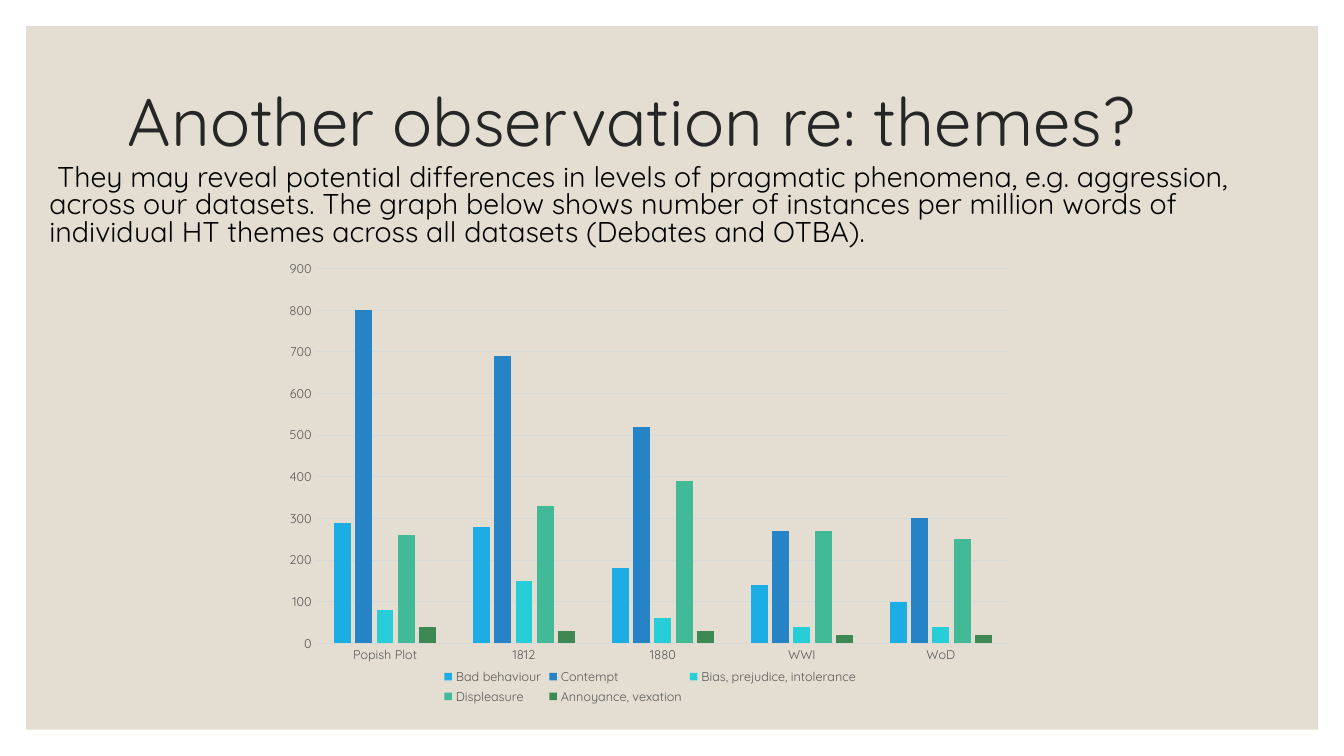
from lxml.etree import SubElement
from pptx import Presentation
from pptx.chart.data import CategoryChartData
from pptx.dml.color import RGBColor
from pptx.enum.chart import XL_CHART_TYPE as ChartType, XL_LEGEND_POSITION as LegendPosition
from pptx.enum.chart import XL_TICK_MARK as TickMark
from pptx.enum.shapes import MSO_SHAPE as Shape
from pptx.enum.text import MSO_ANCHOR as Anchor, MSO_AUTO_SIZE as AutoSize, PP_ALIGN as Align
from pptx.oxml import parse_xml
from pptx.oxml.ns import nsdecls, qn
from pptx.util import Cm, Pt

FONT = "Quicksand"
SAND = RGBColor(0xE3, 0xDE, 0xD1)
CHARCOAL = RGBColor(0x26, 0x26, 0x26)
BLACK = RGBColor(0, 0, 0)
LABEL_GREY = RGBColor(0x59, 0x59, 0x59)
LINE_GREY = RGBColor(0xD9, 0xD9, 0xD9)

TITLE = "Another observation re: themes?"
BODY = (
    " They may reveal potential differences in levels of pragmatic phenomena, e.g. aggression, "
    "across our datasets. The graph below shows number of instances per million words of "
    "individual HT themes across all datasets (Debates and OTBA)."
)
DATASETS = ["Popish Plot", "1812", "1880", "WWI", "WoD"]
THEMES = [
    ("Bad behaviour", [290, 280, 180, 140, 100], RGBColor(0x1C, 0xAD, 0xE4)),
    ("Contempt", [800, 690, 520, 270, 300], RGBColor(0x26, 0x83, 0xC6)),
    ("Bias, prejudice, intolerance", [80, 150, 60, 40, 40], RGBColor(0x27, 0xCE, 0xD7)),
    ("Displeasure", [260, 330, 390, 270, 250], RGBColor(0x42, 0xBA, 0x97)),
    ("Annoyance, vexation", [40, 30, 30, 20, 20], RGBColor(0x3E, 0x88, 0x53)),
]
PLOT_LAYOUT = {"x": 0.055, "y": 0.024, "w": 0.924, "h": 0.832}


def set_font(font, size, color):
    font.name = FONT
    font.size = Pt(size)
    font.color.rgb = color


def add_panel(slide):
    panel = slide.shapes.add_shape(Shape.RECTANGLE, Cm(0.66), Cm(0.66), Cm(32.56), Cm(17.73))
    panel.shadow.inherit = False
    panel.fill.solid()
    panel.fill.fore_color.rgb = SAND
    panel.line.fill.background()
    slide.shapes.title.element.addprevious(panel.element)


def fill_placeholder(box, place, text, size, color, anchor, line_spacing, space_before):
    box.left, box.top, box.width, box.height = (Cm(length) for length in place)
    frame = box.text_frame
    frame.text = text
    frame.word_wrap = True
    frame.auto_size = AutoSize.NONE
    frame.vertical_anchor = anchor
    para = frame.paragraphs[0]
    para.alignment = Align.LEFT
    para.line_spacing = line_spacing
    para.space_before = Pt(space_before)
    set_font(para.font, size, color)
    properties = para._p.get_or_add_pPr()
    properties.set("marL", "0")
    properties.set("indent", "0")
    properties.insert_element_before(
        parse_xml(f"<a:buNone {nsdecls('a')}/>"), "a:tabLst", "a:defRPr", "a:extLst"
    )


def set_line(line, color):
    line.color.rgb = color
    line.width = Pt(0.75)


def style_axis(axis):
    axis.major_tick_mark = axis.minor_tick_mark = TickMark.NONE
    set_font(axis.tick_labels.font, 9, LABEL_GREY)


def set_plot_layout(chart):
    plot_area = chart._chartSpace.chart.plotArea
    for old in plot_area.findall(qn("c:layout")):
        plot_area.remove(old)
    layout = parse_xml(f"<c:layout {nsdecls('c')}/>")
    plot_area.insert(0, layout)
    manual = SubElement(layout, qn("c:manualLayout"))
    SubElement(manual, qn("c:layoutTarget")).set("val", "inner")
    for side in "xy":
        SubElement(manual, qn(f"c:{side}Mode")).set("val", "edge")
    for side, share in PLOT_LAYOUT.items():
        SubElement(manual, qn(f"c:{side}")).set("val", str(share))


def add_theme_chart(slide):
    data = CategoryChartData()
    data.categories = DATASETS
    for name, values, _ in THEMES:
        data.add_series(name, values)
    chart = slide.shapes.add_chart(
        ChartType.COLUMN_CLUSTERED, Cm(6.91), Cm(6.5), Cm(18.95), Cm(11.35), data
    ).chart
    set_font(chart.font, 10, BLACK)
    chart.has_title = False

    plot = chart.plots[0]
    plot.vary_by_categories = False
    plot.gap_width = 219
    plot.overlap = -27
    for series, (_, _, color) in zip(plot.series, THEMES):
        series.format.fill.solid()
        series.format.fill.fore_color.rgb = color

    style_axis(chart.category_axis)
    set_line(chart.category_axis.format.line, LINE_GREY)
    value_axis = chart.value_axis
    style_axis(value_axis)
    value_axis.minimum_scale = 0
    value_axis.maximum_scale = 900
    value_axis.major_unit = 100
    value_axis.format.line.fill.background()
    set_line(value_axis.major_gridlines.format.line, LINE_GREY)

    chart.has_legend = True
    chart.legend.position = LegendPosition.BOTTOM
    chart.legend.include_in_layout = False
    set_font(chart.legend.font, 9, LABEL_GREY)
    set_plot_layout(chart)


def main():
    deck = Presentation()
    deck.slide_width = Cm(33.87)
    deck.slide_height = Cm(19.05)
    slide = deck.slides.add_slide(deck.slide_layouts[1])
    add_panel(slide)
    fill_placeholder(slide.shapes.title, (2.97, 1.78, 27.94, 2.74), TITLE, 48, CHARCOAL,
                     Anchor.MIDDLE, 0.9, 0)
    fill_placeholder(slide.placeholders[1], (0.99, 4.04, 32.23, 2.46), BODY, 20.4, BLACK,
                     Anchor.TOP, 0.8, 9)
    add_theme_chart(slide)
    deck.save("out.pptx")


if __name__ == "__main__":
    main()
